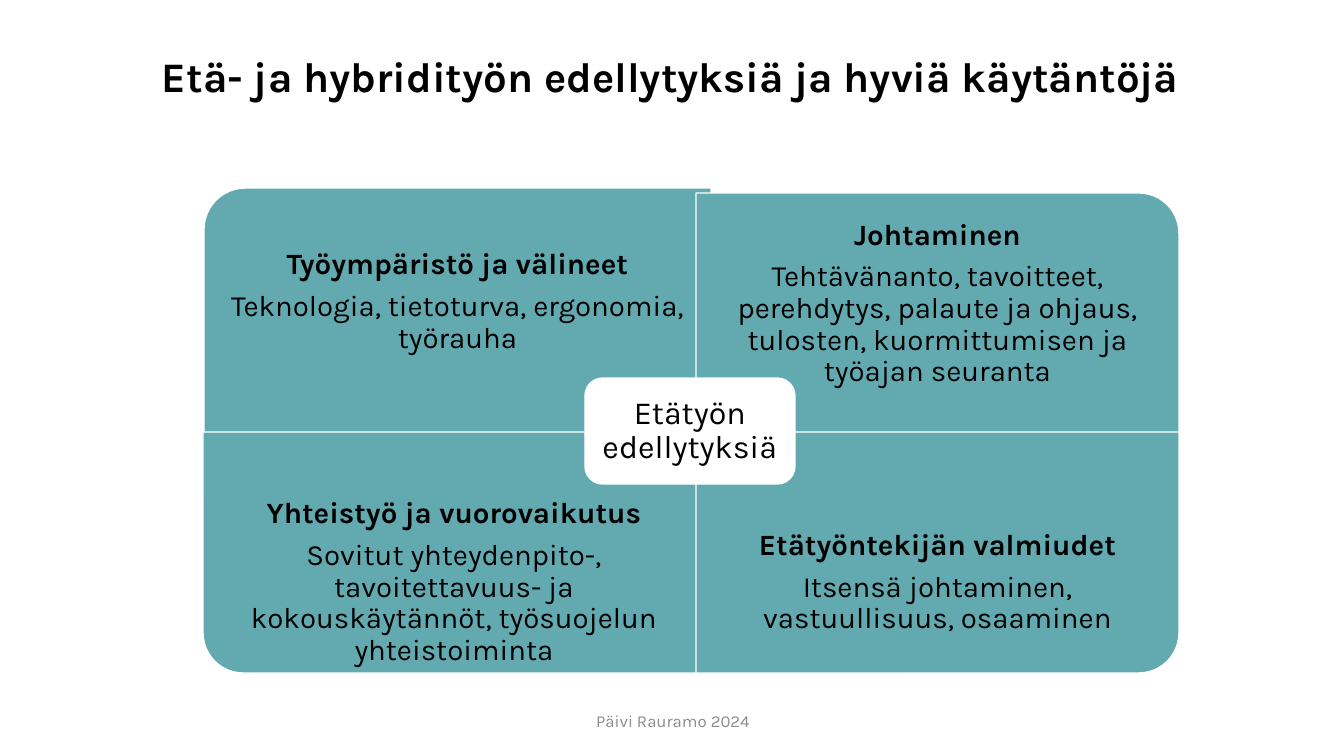
from pptx import Presentation
from pptx.dml.color import RGBColor
from pptx.enum.shapes import MSO_SHAPE
from pptx.enum.text import MSO_ANCHOR, PP_ALIGN
from pptx.util import Emu, Pt

PX = 914400 / 100.8
FONT = "Karla"
TEAL, WHITE, BLACK, GREY = "63AAB0", "FFFFFF", "000000", "8C8C8C"

TITLE = "Etä- ja hybridityön edellytyksiä ja hyviä käytäntöjä"
FOOTER = "Päivi Rauramo 2024"
CENTRE = "Etätyön edellytyksiä"
CENTRE_BOX = (585, 378, 210, 106)
UPPER_INSET = 42

QUADRANTS = [
    {"heading": "Työympäristö ja välineet",
     "body": "Teknologia, tietoturva, ergonomia, työrauha",
     "box": (204, 188, 507, 248), "turn": 270, "upper": True},
    {"heading": "Johtaminen",
     "body": "Tehtävänanto, tavoitteet, perehdytys, palaute ja ohjaus, "
             "tulosten, kuormittumisen ja työajan seuranta",
     "box": (696, 193, 483, 240), "turn": 0, "upper": True},
    {"heading": "Yhteistyö ja vuorovaikutus",
     "body": "Sovitut yhteydenpito-, tavoitettavuus- ja kokouskäytännöt, "
             "työsuojelun yhteistoiminta",
     "box": (203, 432, 502, 241), "turn": 180, "upper": False},
    {"heading": "Etätyöntekijän valmiudet",
     "body": "Itsensä johtaminen, vastuullisuus, osaaminen",
     "box": (696, 432, 483, 241), "turn": 90, "upper": False},
]


def px(length):
    return Emu(round(length * PX))


def colour(hex_string):
    return RGBColor.from_string(hex_string)


def add_panel(slide, preset, box, fill, turn=0):
    left, top, width, height = box
    if turn % 180:
        left += (width - height) / 2
        top += (height - width) / 2
        width, height = height, width
    panel = slide.shapes.add_shape(preset, *map(px, (left, top, width, height)))
    panel.rotation = turn
    panel.shadow.inherit = False
    panel.fill.solid()
    panel.fill.fore_color.rgb = colour(fill)
    panel.line.color.rgb = colour(WHITE)
    panel.line.width = Pt(1)


def add_text(slide, box, lines, size, ink=BLACK, align=PP_ALIGN.CENTER,
             anchor=MSO_ANCHOR.MIDDLE, insets=(0, 0, 0, 0), spacing=1):
    frame = slide.shapes.add_textbox(*map(px, box)).text_frame
    frame.word_wrap = True
    frame.vertical_anchor = anchor
    (frame.margin_left, frame.margin_top,
     frame.margin_right, frame.margin_bottom) = map(px, insets)
    for number, (words, bold) in enumerate(lines):
        paragraph = frame.add_paragraph() if number else frame.paragraphs[0]
        paragraph.alignment = align
        paragraph.line_spacing = spacing
        if number < len(lines) - 1:
            paragraph.space_after = Pt(7)
        run = paragraph.add_run()
        run.text = words
        run.font.name = FONT
        run.font.size = Pt(size)
        run.font.bold = bold
        run.font.color.rgb = colour(ink)


def add_quadrant(slide, quadrant):
    left, top, width, height = quadrant["box"]
    add_panel(slide, MSO_SHAPE.ROUND_1_RECTANGLE, quadrant["box"], TEAL, quadrant["turn"])
    text_height = height * 3 / 4
    text_top = top if quadrant["upper"] else top + height - text_height
    inset_top = UPPER_INSET if quadrant["upper"] else 0
    add_text(slide, (left, text_top, width, text_height),
             [(quadrant["heading"], True), (quadrant["body"], False)], 21,
             insets=(16, inset_top, 16, 0), spacing=0.9)


def main():
    deck = Presentation()
    deck.slide_width, deck.slide_height = px(1344), px(756)
    slide = deck.slides.add_slide(deck.slide_layouts[6])
    add_text(slide, (162, 51, 1089, 102), [(TITLE, True)], 30,
             align=PP_ALIGN.LEFT, anchor=MSO_ANCHOR.TOP)
    add_text(slide, (446, 701, 454, 40), [(FOOTER, False)], 12, ink=GREY)
    for quadrant in QUADRANTS:
        add_quadrant(slide, quadrant)
    add_panel(slide, MSO_SHAPE.ROUNDED_RECTANGLE, CENTRE_BOX, WHITE)
    add_text(slide, CENTRE_BOX, [(CENTRE, False)], 23,
             insets=(15, 0, 15, 0), spacing=0.9)
    deck.save("out.pptx")


if __name__ == "__main__":
    main()
